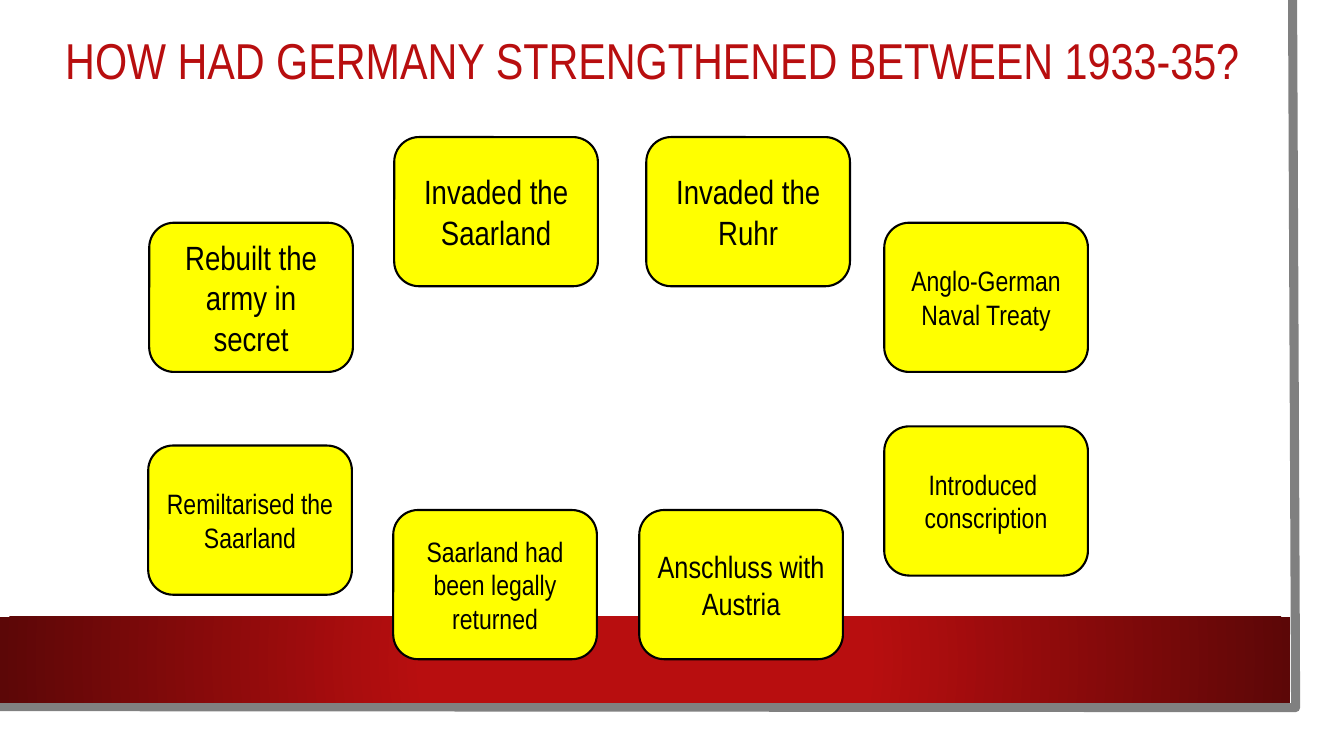
import pptx
import pptx.util
import pptx.dml.color
import pptx.enum.shapes
import pptx.enum.text
import pptx.oxml
import pptx.oxml.ns

Inches = pptx.util.Inches
Pt = pptx.util.Pt
RGBColor = pptx.dml.color.RGBColor
SHAPE = pptx.enum.shapes.MSO_SHAPE
ALIGN = pptx.enum.text.PP_ALIGN
MIDDLE = pptx.enum.text.MSO_ANCHOR.MIDDLE

RED = RGBColor(0xB8, 0x0E, 0x0F)
WHITE = RGBColor(0xFF, 0xFF, 0xFF)
GREY = RGBColor(0x80, 0x80, 0x80)
YELLOW = RGBColor(0xFF, 0xFF, 0x00)
BLACK = RGBColor(0, 0, 0)
FONT = "Arial Narrow"
BOX_WIDTH, BOX_HEIGHT = 2.02, 1.48


def add_box(kind, left, top, width, height):
    box = page.shapes.add_shape(
        kind, Inches(left), Inches(top), Inches(width), Inches(height))
    box.shadow.inherit = False
    box.line.fill.background()
    return box


def add_text(para, text, size, color):
    span = para.add_run()
    span.text = text
    span.font.name = FONT
    span.font.size = Pt(size)
    span.font.color.rgb = color


deck = pptx.Presentation()
deck.slide_width = Inches(13.33)
deck.slide_height = Inches(7.5)
page = deck.slides.add_slide(deck.slide_layouts[5])

# White sheet
sheet = add_box(SHAPE.RECTANGLE, 0, 0, 13.1, 7.27)
sheet.fill.solid()
sheet.fill.fore_color.rgb = WHITE

# Grey edge down the right side and along the bottom
builder = page.shapes.build_freeform(Inches(12.82), 0)
builder.add_line_segments(
    [(Inches(12.85), Inches(7.02)), (Inches(-0.03), Inches(7.01))], close=False)
edge = builder.convert_to_shape()
edge.shadow.inherit = False
edge.fill.background()
edge.line.color.rgb = GREY
edge.line.width = Pt(6.5)

# Red band with a gradient that darkens away from the centre
band = add_box(SHAPE.RECTANGLE, 0, 6.12, 12.8, 0.85)
band.fill.background()
gradient = pptx.oxml.parse_xml(
    '<a:gradFill xmlns:a="http://schemas.openxmlformats.org/drawingml/2006/main"'
    ' rotWithShape="1"><a:gsLst>'
    '<a:gs pos="34000"><a:srgbClr val="B80E0F"/></a:gs>'
    '<a:gs pos="100000"><a:srgbClr val="5C0707"/></a:gs></a:gsLst>'
    '<a:path path="circle"><a:fillToRect l="50000" t="50000" r="50000" b="50000"/>'
    '</a:path></a:gradFill>')
properties = band.element.spPr
properties.replace(properties.find(pptx.oxml.ns.qn("a:noFill")), gradient)

# Title, brought in front of the backdrop
title = page.shapes.title
title.element.getparent().append(title.element)
title.left, title.top = Inches(0.23), Inches(0)
title.width, title.height = Inches(12.49), Inches(1.26)
title.text_frame.auto_size = pptx.enum.text.MSO_AUTO_SIZE.NONE
title.text_frame.word_wrap = True
title.text_frame.vertical_anchor = MIDDLE
para = title.text_frame.paragraphs[0]
para.alignment = ALIGN.CENTER
para.line_spacing = 0.9
add_text(para, "HOW HAD GERMANY STRENGTHENED BETWEEN 1933-35?", 36, RED)

# Ring of answer boxes: left, top, text size, lines
answers = [
    (1.48, 2.21, 24, ["Rebuilt the army in secret"]),
    (3.91, 1.36, 24, ["Invaded the Saarland"]),
    (1.47, 4.42, 20, ["Remiltarised the Saarland"]),
    (6.34, 5.06, 22, ["Anschluss with Austria"]),
    (8.77, 4.23, 20, ["Introduced ", "conscription"]),
    (6.41, 1.36, 24, ["Invaded the Ruhr"]),
    (3.9, 5.06, 20, ["Saarland had been legally returned"]),
    (8.77, 2.21, 20, ["Anglo-German Naval Treaty"]),
]
for left, top, size, lines in answers:
    answer = add_box(SHAPE.ROUNDED_RECTANGLE, left, top, BOX_WIDTH, BOX_HEIGHT)
    answer.fill.solid()
    answer.fill.fore_color.rgb = YELLOW
    answer.line.color.rgb = BLACK
    answer.line.width = Pt(1.5)
    answer.text_frame.word_wrap = True
    answer.text_frame.vertical_anchor = MIDDLE
    para = answer.text_frame.paragraphs[0]
    para.alignment = ALIGN.CENTER
    for number, line in enumerate(lines):
        if number:
            para.add_line_break()
        add_text(para, line, size, BLACK)

deck.save("out.pptx")
